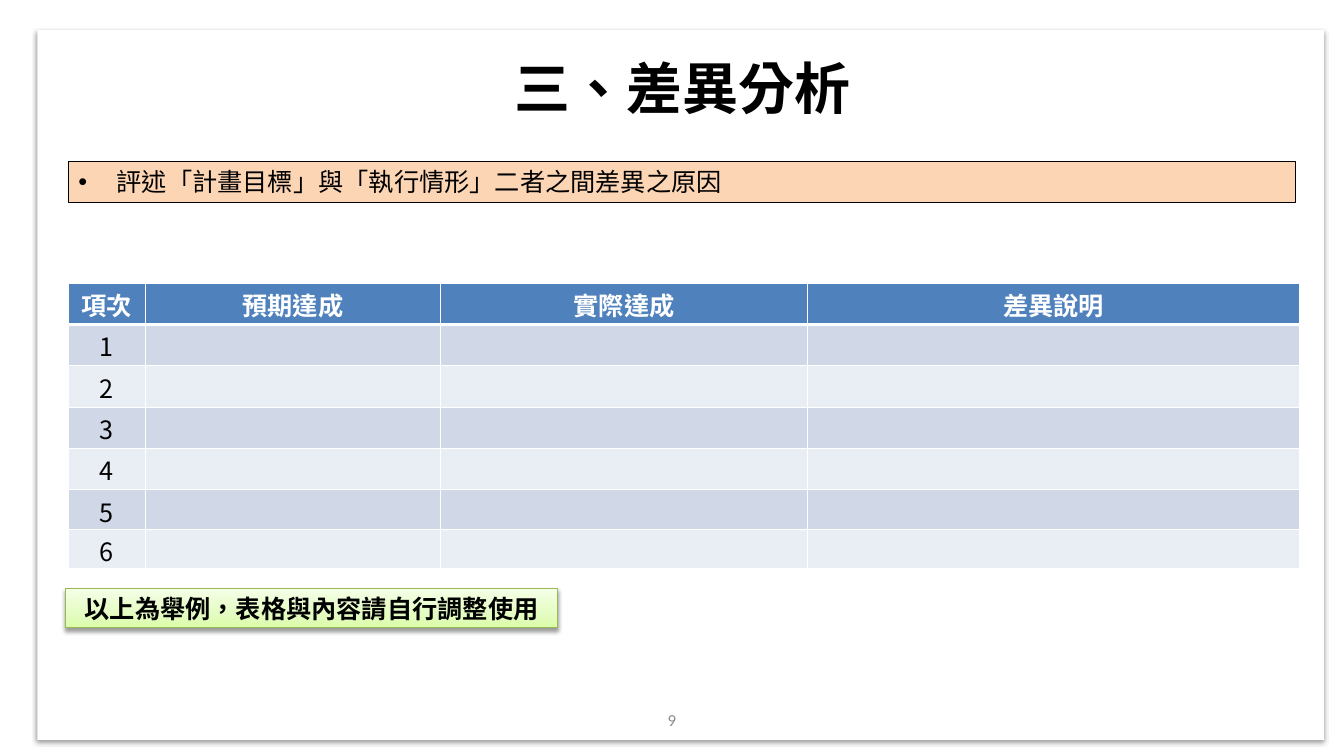
"""Build the variance analysis slide with its sample table."""
from copy import deepcopy
from dataclasses import dataclass, field

from lxml import etree
from pptx import Presentation
from pptx.dml.color import RGBColor
from pptx.enum.shapes import MSO_SHAPE
from pptx.enum.text import MSO_ANCHOR, MSO_AUTO_SIZE, PP_ALIGN
from pptx.oxml.ns import qn
from pptx.util import Inches, Pt

RECT = MSO_SHAPE.RECTANGLE
TOP, MIDDLE = MSO_ANCHOR.TOP, MSO_ANCHOR.MIDDLE
LEFT, CENTER = PP_ALIGN.LEFT, PP_ALIGN.CENTER
NO_FIT = MSO_AUTO_SIZE.NONE

BLACK = RGBColor(0x00, 0x00, 0x00)
WHITE = RGBColor(0xFF, 0xFF, 0xFF)
GRAY = RGBColor(0x8C, 0x8C, 0x8C)
PEACH = RGBColor(0xFC, 0xD5, 0xB5)
BLUE = RGBColor(0x4F, 0x81, 0xBD)
BANDS = (RGBColor(0xD0, 0xD8, 0xE8), RGBColor(0xE9, 0xED, 0xF4))
GREEN = RGBColor(0x98, 0xB9, 0x55)
GLOW = (
    (0, RGBColor(0xDA, 0xFD, 0xA7)),
    (0.35, RGBColor(0xE4, 0xFC, 0xC2)),
    (1, RGBColor(0xF5, 0xFF, 0xE7)),
)

LATIN, HAN = "Calibri", "Noto Sans CJK SC"
HEADS = ("項次", "預期達成", "實際達成", "差異說明")
COLS = (0.76, 2.93, 3.64, 4.88)
ROWS = (0.41,) * 5 + (0.39,) * 2


@dataclass
class Box:
    """A rectangle with its place, paint and text."""
    at: tuple[float, float, float, float]
    fill: RGBColor | tuple | None = None
    line: RGBColor | None = None
    shadow: bool = False
    text: str = ""
    style: dict = field(default_factory=dict)
    align: PP_ALIGN = CENTER
    anchor: MSO_ANCHOR = MIDDLE
    bullet: bool = False


def style(size: int, color: RGBColor, name: str = HAN, bold: bool = False) -> dict:
    """Return the font values for a run."""
    return {"size": Pt(size), "name": name, "bold": bold, "color": color}


def add(parent, tag: str, **attrs):
    """Append a drawing element and return it."""
    return etree.SubElement(parent, qn(tag), attrs)


def write(frame, text: str, look: dict, align: PP_ALIGN = CENTER) -> None:
    """Put one styled line of text in a frame."""
    para = frame.paragraphs[0]
    para.alignment = align
    run = para.add_run()
    run.text = text
    for key, value in look.items():
        if key == "color":
            run.font.color.rgb = value
        else:
            setattr(run.font, key, value)
    props = run._r.get_or_add_rPr()
    props.set("lang", "zh-TW")
    add(props, "a:ea", typeface=HAN)


def indent(para) -> None:
    """Give a paragraph a hanging bullet and a tab stop."""
    props = para._p.get_or_add_pPr()
    props.set("marL", str(Inches(0.38)))
    props.set("indent", str(-Inches(0.38)))
    add(props, "a:buFont", typeface="Arial")
    add(props, "a:buChar", char="•")
    add(add(props, "a:tabLst"), "a:tab", pos=str(Inches(1.38)), algn="l")


def cast(shape) -> None:
    """Drop a soft shadow below a shape."""
    effects = shape._element.spPr.find(qn("a:effectLst"))
    outer = add(effects, "a:outerShdw", blurRad=str(Pt(3.1)), dist=str(Pt(1.6)),
                dir="5400000", rotWithShape="0")
    add(add(outer, "a:srgbClr", val=str(BLACK)), "a:alpha", val="38000")


def paint(shape, fill: RGBColor | tuple | None) -> None:
    """Fill a shape with a colour, a blend or nothing."""
    if fill is None:
        shape.fill.background()
    elif isinstance(fill, RGBColor):
        shape.fill.solid()
        shape.fill.fore_color.rgb = fill
    else:
        shape.fill.gradient()
        shape.fill.gradient_angle = 90
        stops = shape._element.spPr.find(".//" + qn("a:gsLst"))
        stops.append(deepcopy(stops[0]))
        for stop, (place, color) in zip(shape.fill.gradient_stops, fill):
            stop.position = place
            stop.color.rgb = color


def draw(slide, box: Box):
    """Draw a box and return its shape."""
    shape = slide.shapes.add_shape(RECT, *map(Inches, box.at))
    shape.shadow.inherit = False
    paint(shape, box.fill)
    if box.line is None:
        shape.line.fill.background()
    else:
        shape.line.color.rgb = box.line
        shape.line.width = Pt(0.75)
    if box.shadow:
        cast(shape)
    if box.text:
        frame = shape.text_frame
        frame.word_wrap = True
        frame.vertical_anchor = box.anchor
        if box.bullet:
            indent(frame.paragraphs[0])
        write(frame, box.text, box.style, box.align)
    return shape


def edge(cell, row: int) -> None:
    """Rule a cell in white, thick under the heads."""
    props = cell._tc.get_or_add_tcPr()
    widths = {"L": 1, "R": 1, "T": 3 if row == 1 else 1, "B": 3 if row == 0 else 1}
    for side, width in widths.items():
        line = add(props, f"a:ln{side}", w=str(Pt(width)))
        add(add(line, "a:solidFill"), "a:srgbClr", val=str(WHITE))


def draw_table(slide) -> None:
    """Draw the banded table of numbered rows."""
    table = slide.shapes.add_table(
        len(ROWS), len(COLS), Inches(0.68), Inches(2.81),
        Inches(sum(COLS)), Inches(sum(ROWS))).table
    for col, width in zip(table.columns, COLS):
        col.width = Inches(width)
    for row, height in enumerate(ROWS):
        table.rows[row].height = Inches(height)
        for col, head in enumerate(HEADS):
            cell = table.cell(row, col)
            cell.margin_top, cell.margin_bottom = Inches(0.03), 0
            edge(cell, row)
            cell.fill.solid()
            cell.fill.fore_color.rgb = BANDS[(row - 1) % 2] if row else BLUE
            if row == 0:
                write(cell.text_frame, head, style(18, WHITE, bold=True))
            elif col == 0:
                write(cell.text_frame, str(row), style(18, BLACK))
            else:
                cell.text_frame.paragraphs[0].font.size = Pt(18)


def main() -> None:
    """Build and save the slide."""
    deck = Presentation()
    deck.slide_width, deck.slide_height = Inches(13.33), Inches(7.5)
    slide = deck.slides.add_slide(deck.slide_layouts[5])

    panel = draw(slide, Box((0.37, 0.3, 12.76, 7.04), WHITE, shadow=True))
    slide.shapes._spTree.insert(2, panel._element)

    title = slide.shapes.title
    sides = ("left", "top", "width", "height")
    for side, value in zip(sides, (0.6, 0.6, 12.34, 0.53)):
        setattr(title, side, Inches(value))
    title.text_frame.auto_size = NO_FIT
    title.text_frame.vertical_anchor = MIDDLE
    write(title.text_frame, "三、差異分析", style(40, BLACK, bold=True))

    draw_table(slide)
    boxes = (
        Box((6.43, 6.94, 0.47, 0.4), text="9", style=style(12, GRAY, LATIN)),
        Box((0.68, 1.6, 12.17, 0.41), PEACH, BLACK,
            text="評述「計畫目標」與「執行情形」二者之間差異之原因",
            style=style(18, BLACK, LATIN), align=LEFT, anchor=TOP, bullet=True),
        Box((0.65, 5.84, 4.88, 0.39), GLOW, GREEN, True,
            "以上為舉例，表格與內容請自行調整使用", style(18, BLACK, bold=True)),
    )
    for box in boxes:
        draw(slide, box)
    deck.save("out.pptx")


if __name__ == "__main__":
    main()
